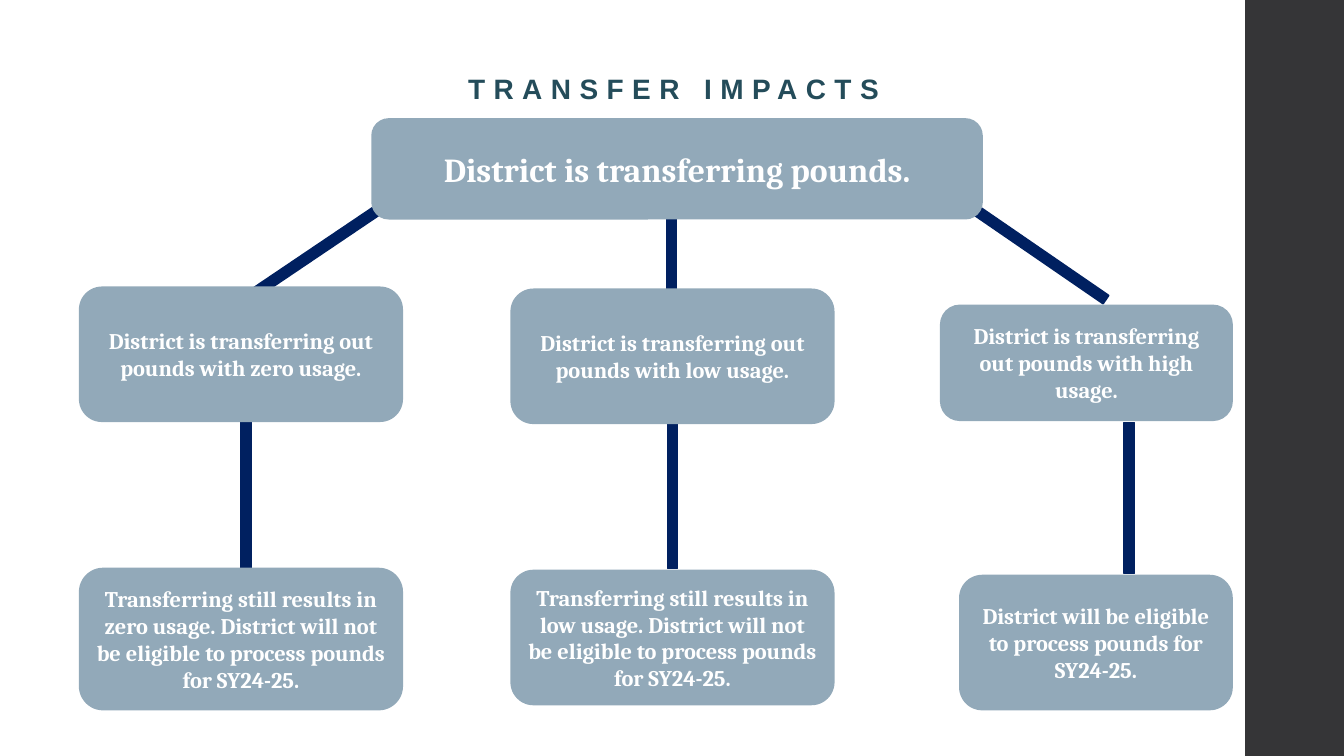
from pptx import Presentation
from pptx.dml.color import RGBColor
from pptx.enum.shapes import MSO_SHAPE
from pptx.enum.text import MSO_ANCHOR, PP_ALIGN
from pptx.util import Inches, Pt

RECTANGLE = MSO_SHAPE.RECTANGLE
ROUNDED = MSO_SHAPE.ROUNDED_RECTANGLE
MIDDLE, BOTTOM = MSO_ANCHOR.MIDDLE, MSO_ANCHOR.BOTTOM
CENTER = PP_ALIGN.CENTER

WHITE = RGBColor(0xFF, 0xFF, 0xFF)
CHARCOAL = RGBColor(0x35, 0x35, 0x37)
NAVY = RGBColor(0x00, 0x20, 0x60)
BLUE_GRAY = RGBColor(0x92, 0xA9, 0xB9)
TEAL = RGBColor(0x24, 0x4C, 0x5A)

prs = Presentation()
prs.slide_width, prs.slide_height = Inches(13.33), Inches(7.5)
slide = prs.slides.add_slide(prs.slide_layouts[5])


def add_block(kind, left, top, width, height, color):
    block = slide.shapes.add_shape(
        kind, Inches(left), Inches(top), Inches(width), Inches(height))
    block.shadow.inherit = False
    block.fill.solid()
    block.fill.fore_color.rgb = color
    block.line.color.rgb = color
    block.line.width = Pt(1.1)
    return block


def style_text(frame, font_name, size, color, anchor):
    frame.word_wrap = True
    frame.vertical_anchor = anchor
    paragraph = frame.paragraphs[0]
    paragraph.alignment = CENTER
    paragraph.font.name = font_name
    paragraph.font.size = Pt(size)
    paragraph.font.bold = True
    paragraph.font.color.rgb = color


# Side band
side_band = add_block(RECTANGLE, 12.35, 0, 1, 7.5, CHARCOAL)
side_band.line.fill.background()

# Title
title = slide.shapes.title
title.left, title.top = Inches(0.93), Inches(-0.35)
title.width, title.height = Inches(11.5), Inches(1.45)
title.text_frame.text = "TRANSFER IMPACTS"
style_text(title.text_frame, "Arial", 20, TEAL, BOTTOM)
heading = title.text_frame.paragraphs[0]
heading.line_spacing = 0.9
heading.runs[0].font._element.set("spc", "600")

# Branches: left, top, length, rotation
branches = [
    (1.69, 4.84, 1.5, 90),
    (5.92, 4.84, 1.5, 90),
    (10.45, 4.89, 1.5, 90),
    (9.51, 2.47, 1.6, 34.5),
    (6.12, 2.32, 1.08, 90),
    (2.27, 2.49, 1.6, 146),
]
for left, top, length, rotation in branches:
    branch = add_block(RECTANGLE, left, top, length, 0.1, NAVY)
    branch.rotation = rotation

# Decision boxes: left, top, width, height, text size, text
boxes = [
    (3.69, 1.18, 6.05, 0.99, 24, "District is transferring pounds."),
    (0.79, 2.85, 3.2, 1.33, 16,
     "District is transferring out pounds with zero usage."),
    (5.07, 2.87, 3.2, 1.33, 16,
     "District is transferring out pounds with low usage."),
    (9.33, 3.03, 2.89, 1.14, 16,
     "District is transferring out pounds with high usage."),
    (0.79, 5.64, 3.2, 1.4, 16,
     "Transferring still results in zero usage. District will not be "
     "eligible to process pounds for SY24-25."),
    (5.07, 5.66, 3.2, 1.33, 16,
     "Transferring still results in low usage. District will not be "
     "eligible to process pounds for SY24-25."),
    (9.52, 5.71, 2.7, 1.33, 16,
     "District will be eligible to process pounds for SY24-25."),
]
for left, top, width, height, size, text in boxes:
    box = add_block(ROUNDED, left, top, width, height, BLUE_GRAY)
    box.text_frame.text = text
    style_text(box.text_frame, "Cambria", size, WHITE, MIDDLE)

prs.save("out.pptx")
